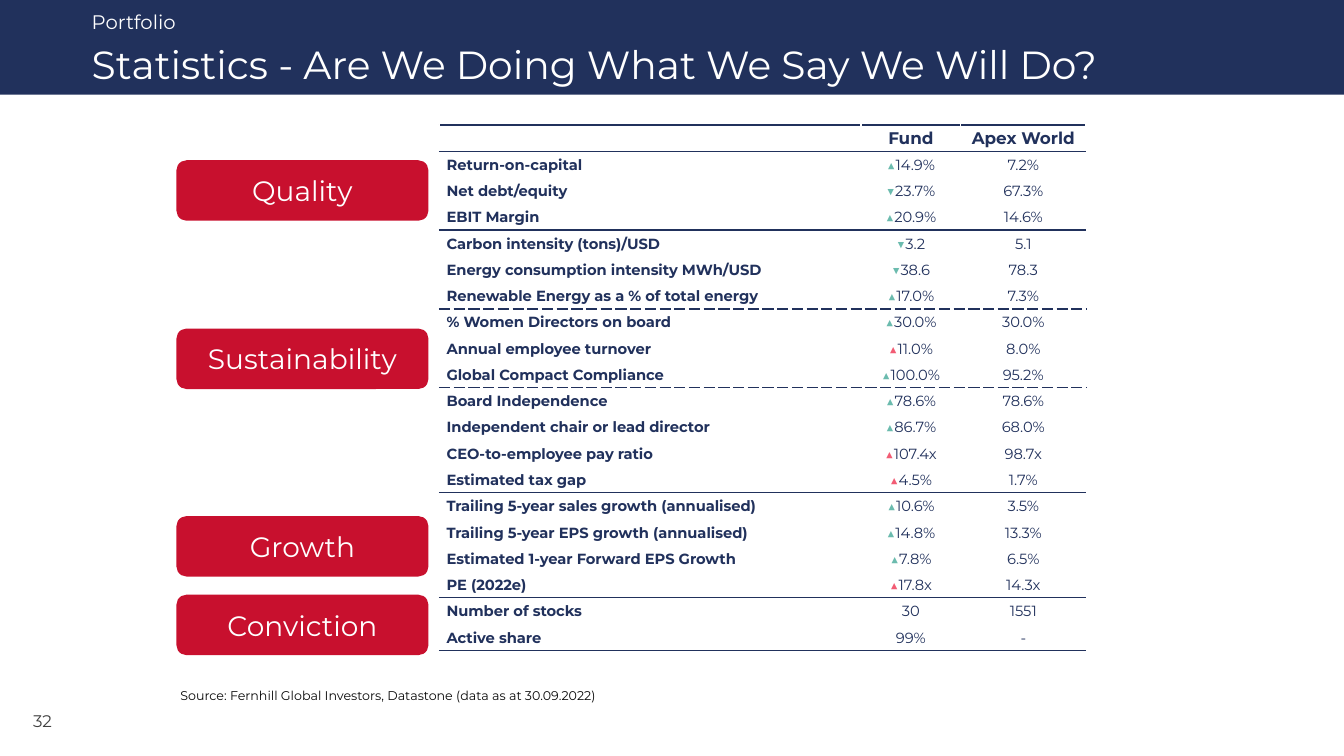
from typing import NamedTuple

from lxml import etree
from pptx import Presentation
from pptx.dml.color import RGBColor
from pptx.enum.shapes import MSO_SHAPE
from pptx.enum.text import MSO_ANCHOR, MSO_AUTO_SIZE, PP_ALIGN
from pptx.oxml.ns import qn
from pptx.util import Inches, Pt

RECTANGLE, ROUNDED = MSO_SHAPE.RECTANGLE, MSO_SHAPE.ROUNDED_RECTANGLE
TOP, MIDDLE, BOTTOM = MSO_ANCHOR.TOP, MSO_ANCHOR.MIDDLE, MSO_ANCHOR.BOTTOM
LEFT, CENTER = PP_ALIGN.LEFT, PP_ALIGN.CENTER
FIXED_SIZE = MSO_AUTO_SIZE.NONE

FONT = "Montserrat"
NAVY, RED, WHITE = "21315C", "C8102E", "FFFFFF"
BETTER, WORSE = "6BBBAE", "F25C74"
SOLID, DASHED = "solid", "sysDash"


class Pillar(NamedTuple):
    label: str
    top: float


class Statistic(NamedTuple):
    measure: str
    arrow: str
    arrow_color: str
    fund: str
    benchmark: str
    rule: str = ""


PILLARS = [
    Pillar("Quality", 1.59),
    Pillar("Sustainability", 3.26),
    Pillar("Growth", 5.12),
    Pillar("Conviction", 5.9),
]

STATISTICS = [
    Statistic("Return-on-capital", "▲", BETTER, "14.9%", "7.2%"),
    Statistic("Net debt/equity", "▼", BETTER, "23.7%", "67.3%"),
    Statistic("EBIT Margin", "▲", BETTER, "20.9%", "14.6%", SOLID),
    Statistic("Carbon intensity (tons)/USD", "▼", BETTER, "3.2", "5.1"),
    Statistic("Energy consumption intensity MWh/USD", "▼", BETTER, "38.6", "78.3"),
    Statistic("Renewable Energy as a % of total energy", "▲", BETTER, "17.0%", "7.3%", DASHED),
    Statistic("% Women Directors on board", "▲", BETTER, "30.0%", "30.0%"),
    Statistic("Annual employee turnover", "▲", WORSE, "11.0%", "8.0%"),
    Statistic("Global Compact Compliance", "▲", BETTER, "100.0%", "95.2%", DASHED),
    Statistic("Board Independence", "▲", BETTER, "78.6%", "78.6%"),
    Statistic("Independent chair or lead director", "▲", BETTER, "86.7%", "68.0%"),
    Statistic("CEO-to-employee pay ratio", "▲", WORSE, "107.4x", "98.7x"),
    Statistic("Estimated tax gap", "▲", WORSE, "4.5%", "1.7%", SOLID),
    Statistic("Trailing 5-year sales growth (annualised)", "▲", BETTER, "10.6%", "3.5%"),
    Statistic("Trailing 5-year EPS growth (annualised)", "▲", BETTER, "14.8%", "13.3%"),
    Statistic("Estimated 1-year Forward EPS Growth", "▲", BETTER, "7.8%", "6.5%"),
    Statistic("PE (2022e)", "▲", WORSE, "17.8x", "14.3x", SOLID),
    Statistic("Number of stocks", "", NAVY, "30", "1551"),
    Statistic("Active share", "", NAVY, "99%", "-", SOLID),
]


def rgb(color: str) -> RGBColor:
    return RGBColor.from_string(color)


def write(paragraph, text: str, *, size: float, color: str = WHITE,
          bold: bool = False, align=LEFT) -> None:
    paragraph.alignment = align
    run = paragraph.add_run()
    run.text = text
    run.font.name = FONT
    run.font.size = Pt(size)
    run.font.bold = bold
    run.font.color.rgb = rgb(color)


def set_frame(frame, anchor, inset_x: float = 0, inset_y: float = 0) -> None:
    frame.word_wrap = True
    frame.auto_size = FIXED_SIZE
    frame.vertical_anchor = anchor
    frame.margin_left = frame.margin_right = Inches(inset_x)
    frame.margin_top = frame.margin_bottom = Inches(inset_y)


def add_text(slide, text: str, left: float, top: float, width: float, height: float,
             *, anchor=TOP, inset_x: float = 0, inset_y: float = 0,
             size: float, color: str) -> None:
    box = slide.shapes.add_textbox(Inches(left), Inches(top), Inches(width), Inches(height))
    set_frame(box.text_frame, anchor, inset_x, inset_y)
    write(box.text_frame.paragraphs[0], text, size=size, color=color)


def add_block(slide, kind, left: float, top: float, width: float, height: float, color: str):
    block = slide.shapes.add_shape(kind, Inches(left), Inches(top), Inches(width), Inches(height))
    block.shadow.inherit = False
    block.fill.solid()
    block.fill.fore_color.rgb = rgb(color)
    block.line.fill.background()
    return block


def set_border(cell, side: str, rule: str) -> None:
    line = etree.SubElement(cell._tc.get_or_add_tcPr(), qn(f"a:ln{side}"), w=str(Pt(1)))
    fill = etree.SubElement(line, qn("a:solidFill"))
    etree.SubElement(fill, qn("a:srgbClr"), val=NAVY if rule else WHITE)
    etree.SubElement(line, qn("a:prstDash"), val=rule or SOLID)


def format_cell(cell, rule_above: str, rule_below: str):
    cell.vertical_anchor = MIDDLE
    cell.margin_left = cell.margin_right = Inches(0.07)
    cell.margin_top = cell.margin_bottom = 0
    for side, rule in (("L", ""), ("R", ""), ("T", rule_above), ("B", rule_below)):
        set_border(cell, side, rule)
    cell.fill.solid()
    cell.fill.fore_color.rgb = rgb(WHITE)
    paragraph = cell.text_frame.paragraphs[0]
    paragraph.line_spacing = 1.07
    paragraph.space_after = Pt(8)
    return paragraph


def add_statistics(slide) -> None:
    row_count = len(STATISTICS) + 1
    table = slide.shapes.add_table(
        row_count, 3, Inches(4.36), Inches(1.24), Inches(6.41), Inches(5.22)).table
    table.first_row = table.horz_banding = False
    for column, width in zip(table.columns, (4.18, 0.99, 1.24)):
        column.width = Inches(width)
    for row in table.rows:
        row.height = Inches(5.22 / row_count)

    corner, fund, benchmark = (format_cell(cell, SOLID, SOLID) for cell in table.rows[0].cells)
    etree.SubElement(corner._p, qn("a:endParaRPr"), sz="1050")
    write(fund, "Fund", size=12, color=NAVY, bold=True, align=CENTER)
    write(benchmark, "Apex World", size=12, color=NAVY, bold=True, align=CENTER)

    rule_above = SOLID
    for row, statistic in zip(list(table.rows)[1:], STATISTICS):
        measure, fund, benchmark = (
            format_cell(cell, rule_above, statistic.rule) for cell in row.cells)
        write(measure, statistic.measure, size=10.5, color=NAVY, bold=True)
        if statistic.arrow:
            write(fund, statistic.arrow, size=10.5, color=statistic.arrow_color, align=CENTER)
        write(fund, statistic.fund, size=10.5, color=NAVY, align=CENTER)
        write(benchmark, statistic.benchmark, size=10.5, color=NAVY, align=CENTER)
        rule_above = statistic.rule


def main() -> None:
    deck = Presentation()
    deck.slide_width, deck.slide_height = Inches(13.33), Inches(7.5)
    slide = deck.slides.add_slide(deck.slide_layouts[5])

    banner = add_block(slide, RECTANGLE, 0, -0.1, 13.33, 1.04, NAVY)
    slide.shapes._spTree.insert(2, banner._element)
    add_text(slide, "Portfolio", 0.91, 0.09, 11.76, 0.24, anchor=BOTTOM, size=14, color=WHITE)

    title = slide.shapes.title
    title.left, title.top = Inches(0.91), Inches(0.33)
    title.width, title.height = Inches(11.76), Inches(0.61)
    set_frame(title.text_frame, MIDDLE)
    write(title.text_frame.paragraphs[0],
          "Statistics - Are We Doing What We Say We Will Do?", size=28)

    for pillar in PILLARS:
        block = add_block(slide, ROUNDED, 1.75, pillar.top, 2.5, 0.6, RED)
        set_frame(block.text_frame, MIDDLE, 0.1, 0.05)
        write(block.text_frame.paragraphs[0], pillar.label, size=20, align=CENTER)

    add_statistics(slide)
    add_text(slide, "Source: Fernhill Global Investors, Datastone (data as at 30.09.2022)",
             1.79, 6.78, 9.63, 0.33, inset_y=0.05, size=9, color="080808")
    add_text(slide, "32", 0.23, 7, 0.66, 0.4, inset_x=0.1, inset_y=0.05, size=12, color="414141")
    deck.save("out.pptx")


if __name__ == "__main__":
    main()
